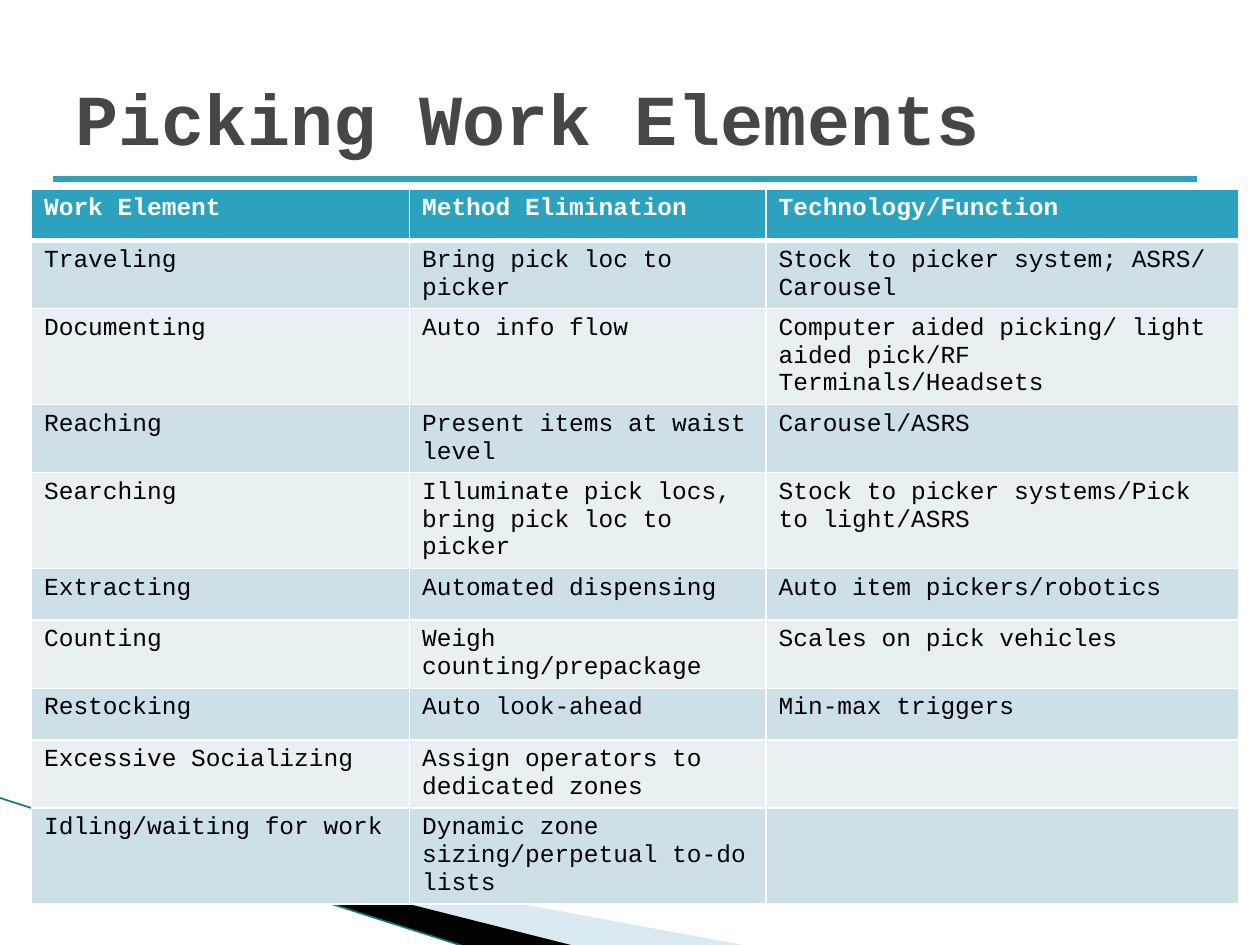
from lxml import etree
from pptx import Presentation
from pptx.dml.color import RGBColor
from pptx.enum.shapes import MSO_CONNECTOR
from pptx.enum.text import MSO_ANCHOR
from pptx.oxml.ns import qn
from pptx.util import Inches, Pt

STRAIGHT = MSO_CONNECTOR.STRAIGHT
MIDDLE = MSO_ANCHOR.MIDDLE
FONT = "Courier New"
TEAL = "2DA2BF"
WHITE = "FFFFFF"
BANDS = ["CDE0E8", "E8F0F4"]
COLUMN_WIDTHS = [3, 2.83, 3.75]
ROW_HEIGHT = 0.41

ROWS = [
    ["Work Element", "Method Elimination", "Technology/Function"],
    ["Traveling", "Bring pick loc to picker", "Stock to picker system; ASRS/ Carousel"],
    ["Documenting", "Auto info flow",
     "Computer aided picking/ light aided pick/RF Terminals/Headsets"],
    ["Reaching", "Present items at waist level", "Carousel/ASRS"],
    ["Searching", "Illuminate pick locs, bring pick loc to picker",
     "Stock to picker systems/Pick to light/ASRS"],
    ["Extracting", "Automated dispensing", "Auto item pickers/robotics"],
    ["Counting", "Weigh counting/prepackage", "Scales on pick vehicles"],
    ["Restocking", "Auto look-ahead", "Min-max triggers"],
    ["Excessive Socializing", "Assign operators to dedicated zones", ""],
    ["Idling/waiting for work", "Dynamic zone sizing/perpetual to-do lists", ""],
]


def rgb(color):
    return RGBColor.from_string(color)


def write_text(text_frame, text, size=14, color="000000", bold=False):
    paragraph = text_frame.paragraphs[0]
    paragraph.font.size = Pt(size)
    if text:
        run = paragraph.add_run()
        run.text = text
        run.font.name = FONT
        run.font.size = Pt(size)
        run.font.bold = bold
        run.font.color.rgb = rgb(color)


def add_line(slide, start, end, color, width):
    points = [Inches(value) for value in (*start, *end)]
    connector = slide.shapes.add_connector(STRAIGHT, *points)
    connector.line.color.rgb = rgb(color)
    connector.line.width = Pt(width)
    properties = connector._element.spPr
    etree.SubElement(properties, qn("a:effectLst"))


def add_wedge(slide, left, top, points, color, opacity=100):
    vertices = [(Inches(left + x), Inches(top + y)) for x, y in points]
    builder = slide.shapes.build_freeform(*vertices[0])
    builder.add_line_segments(vertices[1:], close=True)
    shape = builder.convert_to_shape()
    shape.shadow.inherit = False
    shape.fill.solid()
    shape.fill.fore_color.rgb = rgb(color)
    shape.line.fill.background()
    if opacity < 100:
        color_element = shape._element.spPr.find(".//" + qn("a:srgbClr"))
        etree.SubElement(color_element, qn("a:alpha"), val=str(opacity * 1000))


def add_corner_decoration(slide, left, top):
    add_wedge(slide, left + 0.55, top + 0.17,
              [(0, 0.01), (5.4, 1.01), (4.01, 1.01), (0, 0)], "A0CBDC", 40)
    add_wedge(slide, left + 0.53, top + 0.16,
              [(0, 0), (4.04, 1.02), (3.19, 1.03), (0.01, 0.01)], "000000")
    add_line(slide, (left - 0.01, top), (left + 3.71, top + 1.19), "1B7085", 0.95)


def add_title(slide, left, top, width, height):
    box = slide.shapes.add_textbox(Inches(left), Inches(top), Inches(width), Inches(height))
    box.text_frame.word_wrap = True
    box.text_frame.vertical_anchor = MIDDLE
    write_text(box.text_frame, "Picking Work Elements", size=41, color="464646", bold=True)


def set_borders(cell, top=1, bottom=1):
    properties = cell._tc.get_or_add_tcPr()
    widths = {"lnL": 1, "lnR": 1, "lnT": top, "lnB": bottom}
    for side, width in widths.items():
        line = etree.SubElement(properties, qn("a:" + side), w=str(Pt(width)))
        fill = etree.SubElement(line, qn("a:solidFill"))
        etree.SubElement(fill, qn("a:srgbClr"), val=WHITE)


def add_work_table(slide, left, top):
    frame = slide.shapes.add_table(
        len(ROWS), len(COLUMN_WIDTHS), Inches(left), Inches(top),
        Inches(sum(COLUMN_WIDTHS)), Inches(ROW_HEIGHT * len(ROWS)))
    table = frame.table
    for column, width in zip(table.columns, COLUMN_WIDTHS):
        column.width = Inches(width)
    for index, values in enumerate(ROWS):
        header = index == 0
        table.rows[index].height = Inches(ROW_HEIGHT)
        for cell, value in zip(table.rows[index].cells, values):
            set_borders(cell, top=3 if index == 1 else 1, bottom=3 if header else 1)
            cell.fill.solid()
            cell.fill.fore_color.rgb = rgb(TEAL if header else BANDS[(index - 1) % 2])
            write_text(cell.text_frame, value, bold=header,
                       color=WHITE if header else "000000")


def main():
    presentation = Presentation()
    presentation.slide_width = Inches(10)
    presentation.slide_height = Inches(7.5)
    slide = presentation.slides.add_slide(presentation.slide_layouts[6])
    add_corner_decoration(slide, 0, 6.33)
    add_line(slide, (0.42, 1.42), (9.5, 1.42), TEAL, 3)
    add_work_table(slide, 0.25, 1.5)
    add_title(slide, 0.5, 0.3, 9, 1.25)
    presentation.save("out.pptx")


if __name__ == "__main__":
    main()
